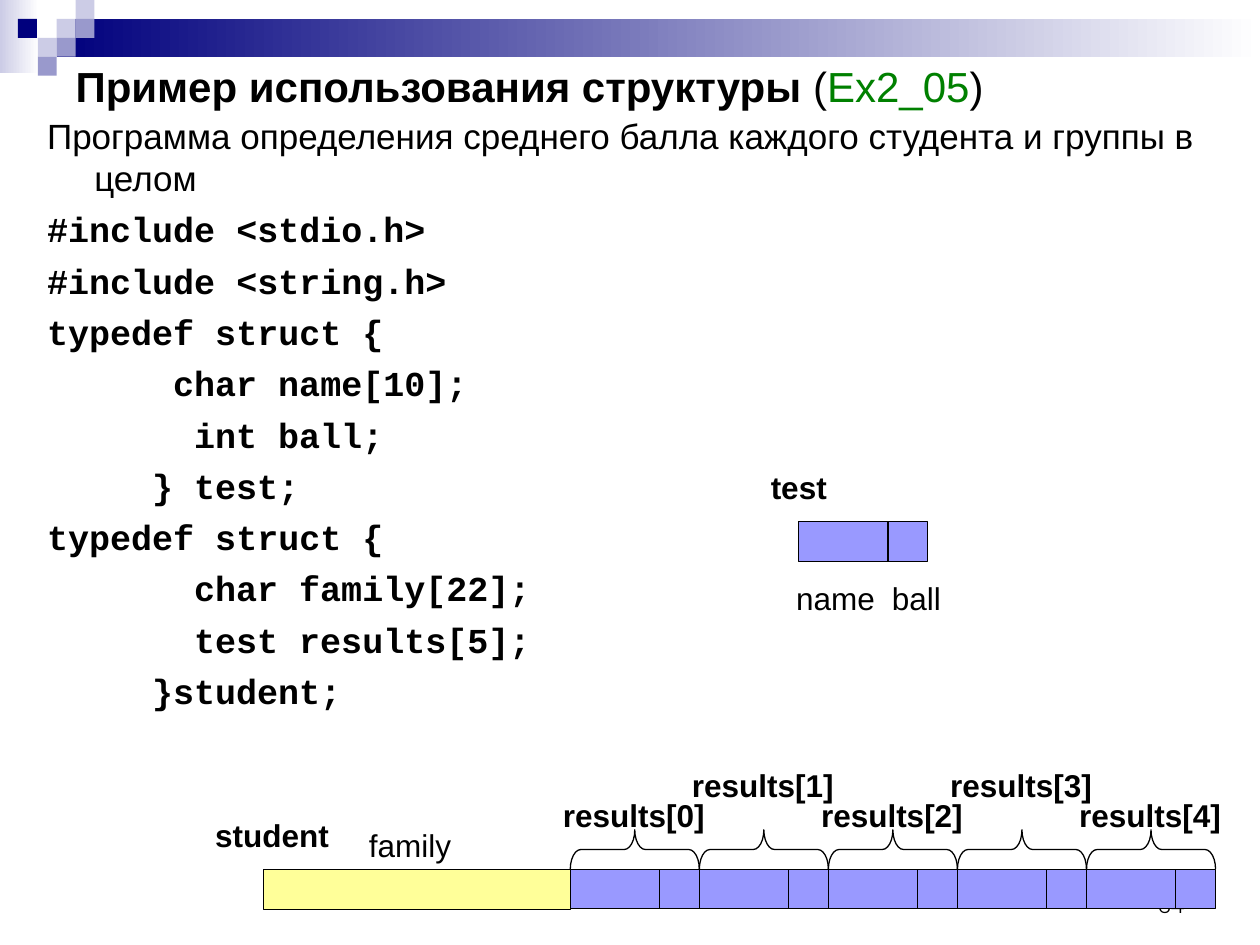
from dataclasses import dataclass

from pptx import Presentation
from pptx import util as u
from pptx.dml import color
from pptx.enum import shapes, text

Pt = u.Pt
BLACK, NAVY, LILAC, VIOLET = "000000", "00007D", "CCCCE6", "9999CC"
CELL, YELLOW, GREEN, WHITE = "9999FF", "FFFF99", "008000", "FFFFFF"
TILE = 10.8
NAME_WIDTH, BALL_WIDTH = 51, 22.75
RESULT_WIDTH = NAME_WIDTH + BALL_WIDTH
CELL_HEIGHT = 22.5
STUDENT_LEFT, RESULTS_LEFT, STUDENT_TOP = 150.4, 325.9, 496.7
HANGING = 27
CODE_CHAR = 12


@dataclass
class Box:
    left: float
    top: float
    width: float
    height: float

    def lengths(self):
        return [Pt(n) for n in (self.left, self.top, self.width, self.height)]


@dataclass
class Label:
    words: str
    left: float
    top: float
    width: float = 97
    bold: bool = True


@dataclass
class CodeLine:
    words: str
    indent: int = 0


TILES = [
    (3, 1, LILAC), (4, 0, LILAC), (4, 1, VIOLET), (2, 2, LILAC),
    (0.95, 1, NAVY), (3, 2, VIOLET), (2, 3, VIOLET),
]
CODE = [
    CodeLine("#include <stdio.h>"),
    CodeLine("#include <string.h>"),
    CodeLine("typedef struct {"),
    CodeLine("char name[10];", 6),
    CodeLine("int ball;", 7),
    CodeLine("} test;", 5),
    CodeLine("typedef struct {"),
    CodeLine("char family[22];", 7),
    CodeLine("test results[5];", 7),
    CodeLine("}student;", 5),
]
LABELS = [
    Label("test", 433.4, 264.2),
    Label("student", 115.9, 463),
    Label("name", 447.8, 327.6, 60, False),
    Label("ball", 502.6, 327.6, 50, False),
    Label("family", 203.7, 468.7, 80, False),
]


def rgb(value: str):
    return color.RGBColor.from_string(value)


def set_font(font, size: float, name: str, bold: bool = False):
    font.size, font.name, font.bold = Pt(size), name, bold
    font.color.rgb = rgb(BLACK)


def add_figure(page, kind, box: Box, fill: str = "", line: str = ""):
    figure = page.shapes.add_shape(kind, *box.lengths())
    figure.shadow.inherit = False
    if fill:
        figure.fill.solid()
        figure.fill.fore_color.rgb = rgb(fill)
    else:
        figure.fill.background()
    if line:
        figure.line.color.rgb = rgb(line)
        figure.line.width = Pt(0.75)
    else:
        figure.line.fill.background()
    return figure


def add_rectangle(page, box: Box, fill: str, line: str = ""):
    return add_figure(page, shapes.MSO_SHAPE.RECTANGLE, box, fill, line)


def add_gradient(page, box: Box, start: str):
    fill = add_rectangle(page, box, start).fill
    fill.gradient()
    fill.gradient_angle = 0
    for stop, value in zip(fill.gradient_stops, (start, WHITE)):
        stop.color.rgb = rgb(value)


def add_text_frame(page, box: Box):
    frame = page.shapes.add_textbox(*box.lengths()).text_frame
    frame.word_wrap = True
    return frame


def add_label(page, label: Label):
    frame = add_text_frame(page, Box(label.left, label.top, label.width, 28.8))
    para = frame.paragraphs[0]
    para.text = label.words
    set_font(para.font, 18, "Arial", label.bold)


def add_test(page, left: float, top: float):
    add_rectangle(page, Box(left, top, NAME_WIDTH, CELL_HEIGHT), CELL, BLACK)
    add_rectangle(page, Box(left + NAME_WIDTH, top, BALL_WIDTH, CELL_HEIGHT), CELL, BLACK)


def add_brace(page, left: float):
    box = Box(left + (RESULT_WIDTH - CELL_HEIGHT) / 2,
              STUDENT_TOP - (CELL_HEIGHT + RESULT_WIDTH) / 2, CELL_HEIGHT, RESULT_WIDTH)
    brace = add_figure(page, shapes.MSO_SHAPE.RIGHT_BRACE, box, line=BLACK)
    brace.rotation = 270
    brace.adjustments[0] = 0.27


def add_header(page):
    add_gradient(page, Box(0, 0, 22.3, 41.8), LILAC)
    add_gradient(page, Box(32.4, TILE, 687.6, 21.6), NAVY)
    for column, row, fill in TILES:
        add_rectangle(page, Box(column * TILE, row * TILE, TILE, TILE), fill)


def add_page_number(page):
    frame = add_text_frame(page, Box(516.2, 491.8, 167.8, 36))
    frame.vertical_anchor = text.MSO_ANCHOR.BOTTOM
    para = frame.paragraphs[0]
    para.text = "64"
    para.alignment = text.PP_ALIGN.RIGHT
    set_font(para.font, 12, "Montserrat")


def fill_title(title):
    title.left, title.top, title.width, title.height = Box(36, 36, 648, 25.9).lengths()
    frame = title.text_frame
    frame.auto_size = text.MSO_AUTO_SIZE.NONE
    frame.vertical_anchor = text.MSO_ANCHOR.MIDDLE
    para = frame.paragraphs[0]
    para.alignment = text.PP_ALIGN.LEFT
    set_font(para.font, 24, "Arial")
    for words, value, bold in (("Пример использования структуры ", BLACK, True),
                               ("(", BLACK, False), ("Ex2_05", GREEN, False),
                               (")", BLACK, False)):
        span = para.add_run()
        span.text = words
        span.font.bold = bold
        span.font.color.rgb = rgb(value)


def set_indent(para, first: float):
    properties = para._p.get_or_add_pPr()
    properties.set("marL", str(Pt(HANGING)))
    properties.set("indent", str(Pt(first - HANGING)))


def add_body(page):
    frame = add_text_frame(page, Box(19.8, 61.9, 680.4, 389.5))
    para = frame.paragraphs[0]
    para.text = "Программа определения среднего балла каждого студента и группы в целом"
    set_font(para.font, 20, "Arial")
    set_indent(para, 0)
    for line in CODE:
        para = frame.add_paragraph()
        para.text = line.words
        para.space_before = Pt(5.3)
        set_font(para.font, 20, "Courier New", True)
        set_indent(para, line.indent * CODE_CHAR)


def main():
    deck = Presentation()
    deck.slide_width, deck.slide_height = Pt(720), Pt(540)
    page = deck.slides.add_slide(deck.slide_layouts[5])
    add_header(page)
    add_page_number(page)
    fill_title(page.shapes.title)
    add_body(page)
    add_test(page, 456.4, 298.2)
    add_rectangle(page, Box(STUDENT_LEFT, STUDENT_TOP, RESULTS_LEFT - STUDENT_LEFT, 23), YELLOW, BLACK)
    for index in range(5):
        left = RESULTS_LEFT + index * RESULT_WIDTH
        add_test(page, left, STUDENT_TOP)
        add_brace(page, left)
        LABELS.append(Label(f"results[{index}]", left - 11.3, 434.2 if index % 2 else 451.4))
    for label in LABELS:
        add_label(page, label)
    deck.save("out.pptx")


if __name__ == "__main__":
    main()
